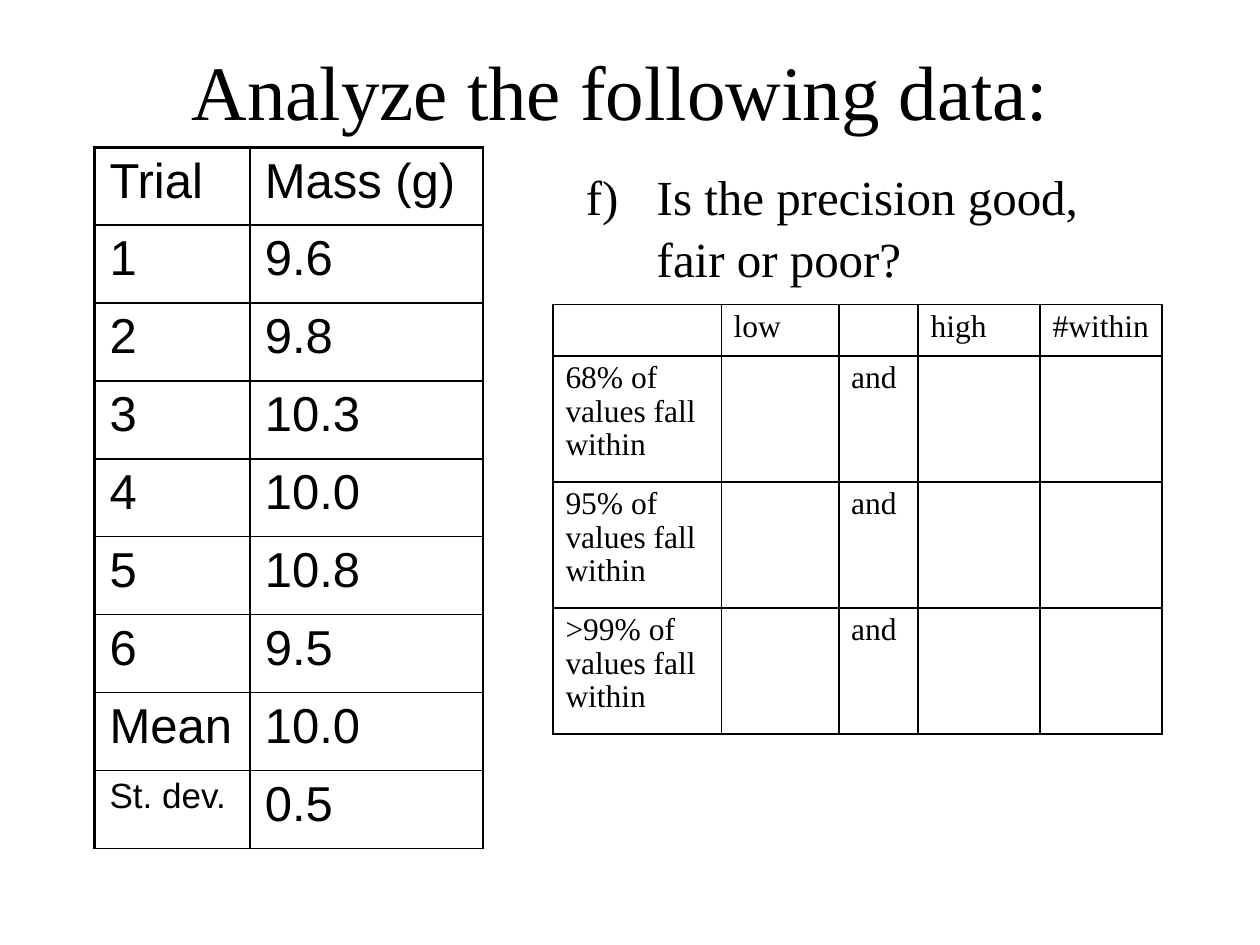
from dataclasses import dataclass

from lxml.etree import SubElement
from pptx import Presentation
from pptx.dml.color import RGBColor
from pptx.enum.text import MSO_ANCHOR, PP_ALIGN
from pptx.oxml.ns import qn
from pptx.util import Cm, Pt

BLACK = RGBColor(0x00, 0x00, 0x00)
SERIF, SANS = "Times New Roman", "Arial"
THIN, THICK = 1, 2.25
TITLE_ONLY = 5


@dataclass
class Grid:
    left: float
    top: float
    widths: list[float]
    heights: list[float]
    rows: list[list[str]]
    margin: float
    font: str
    size: float
    space_before: float = 0
    line_spacing: float = 1.0
    outer: float = THIN


def write(frame, text: str, *, font: str, size: float, align=PP_ALIGN.LEFT,
          space_before: float = 0, line_spacing: float = 1.0):
    para = frame.paragraphs[0]
    para.alignment = align
    para.space_before = Pt(space_before)
    para.line_spacing = line_spacing
    span = para.add_run()
    span.text = text
    span.font.name = font
    span.font.size = Pt(size)
    span.font.color.rgb = BLACK
    return para


def add_borders(cell, widths: dict[str, float]) -> None:
    properties = cell._tc.get_or_add_tcPr()
    for position, (side, width) in enumerate(widths.items()):
        line = SubElement(properties, qn(f"a:ln{side}"), w=str(Pt(width)))
        fill = SubElement(line, qn("a:solidFill"))
        SubElement(fill, qn("a:srgbClr"), val=str(BLACK))
        properties.insert(position, line)


def draw_grid(page, grid: Grid) -> None:
    table = page.shapes.add_table(
        len(grid.heights), len(grid.widths), Cm(grid.left), Cm(grid.top),
        Cm(sum(grid.widths)), Cm(sum(grid.heights))).table
    table.first_row = table.horz_banding = False
    for column, width in zip(table.columns, grid.widths):
        column.width = Cm(width)
    for row, height in zip(table.rows, grid.heights):
        row.height = Cm(height)
    for r, texts in enumerate(grid.rows):
        for c, text in enumerate(texts):
            cell = table.cell(r, c)
            cell.fill.background()
            cell.margin_left = cell.margin_right = Cm(grid.margin)
            cell.margin_top = cell.margin_bottom = Cm(0.13)
            add_borders(cell, {"L": THIN if c else grid.outer, "R": THIN,
                               "T": THIN if r else grid.outer, "B": THIN})
            if text:
                size = 20 if text == "St. dev." else grid.size
                write(cell.text_frame, text, font=grid.font, size=size,
                      space_before=grid.space_before * size,
                      line_spacing=grid.line_spacing)


def number_paragraph(para, scheme: str, start: int, indent: float) -> None:
    properties = para._p.get_or_add_pPr()
    properties.set("marL", str(Cm(indent)))
    properties.set("indent", str(-Cm(indent)))
    SubElement(properties, qn("a:buFont"), typeface=SERIF)
    SubElement(properties, qn("a:buAutoNum"), type=scheme, startAt=str(start))


MEASUREMENTS = [
    ["Trial", "Mass (g)"], ["1", "9.6"], ["2", "9.8"], ["3", "10.3"],
    ["4", "10.0"], ["5", "10.8"], ["6", "9.5"], ["Mean", "10.0"],
    ["St. dev.", "0.5"],
]
RANGES = [["", "low", "", "high", "#within"]] + [
    [f"{share} of values fall within", "", "and", "", ""]
    for share in ("68%", "95%", ">99%")
]
GRIDS = [
    Grid(1.91, 2.97, [3.13, 4.7], [1.57] * 9, MEASUREMENTS, 0.3, SANS, 28,
         space_before=0.2, outer=THICK),
    Grid(11.15, 6.14, [3.39, 2.37, 1.6, 2.46, 2.45], [1.03] + [2.54] * 3,
         RANGES, 0.25, SERIF, 18, line_spacing=0.95),
]


def main() -> None:
    deck = Presentation()
    deck.slide_width, deck.slide_height = Cm(25.4), Cm(19.05)
    page = deck.slides.add_slide(deck.slide_layouts[TITLE_ONLY])

    title = page.shapes.title
    title.left, title.top = Cm(1.91), Cm(0.85)
    title.width, title.height = Cm(21.59), Cm(1.91)
    title.text_frame.vertical_anchor = MSO_ANCHOR.MIDDLE
    write(title.text_frame, "Analyze the following data: ", font=SERIF,
          size=44, align=PP_ALIGN.CENTER)

    for grid in GRIDS:
        draw_grid(page, grid)

    box = page.shapes.add_textbox(Cm(11.56), Cm(3.18), Cm(11.43), Cm(12.85))
    box.text_frame.word_wrap = True
    question = write(box.text_frame, "Is the precision good, fair or poor?",
                     font=SERIF, size=28, space_before=5.6, line_spacing=1.05)
    number_paragraph(question, "alphaLcParenR", start=6, indent=1.43)

    deck.save("out.pptx")


if __name__ == "__main__":
    main()
